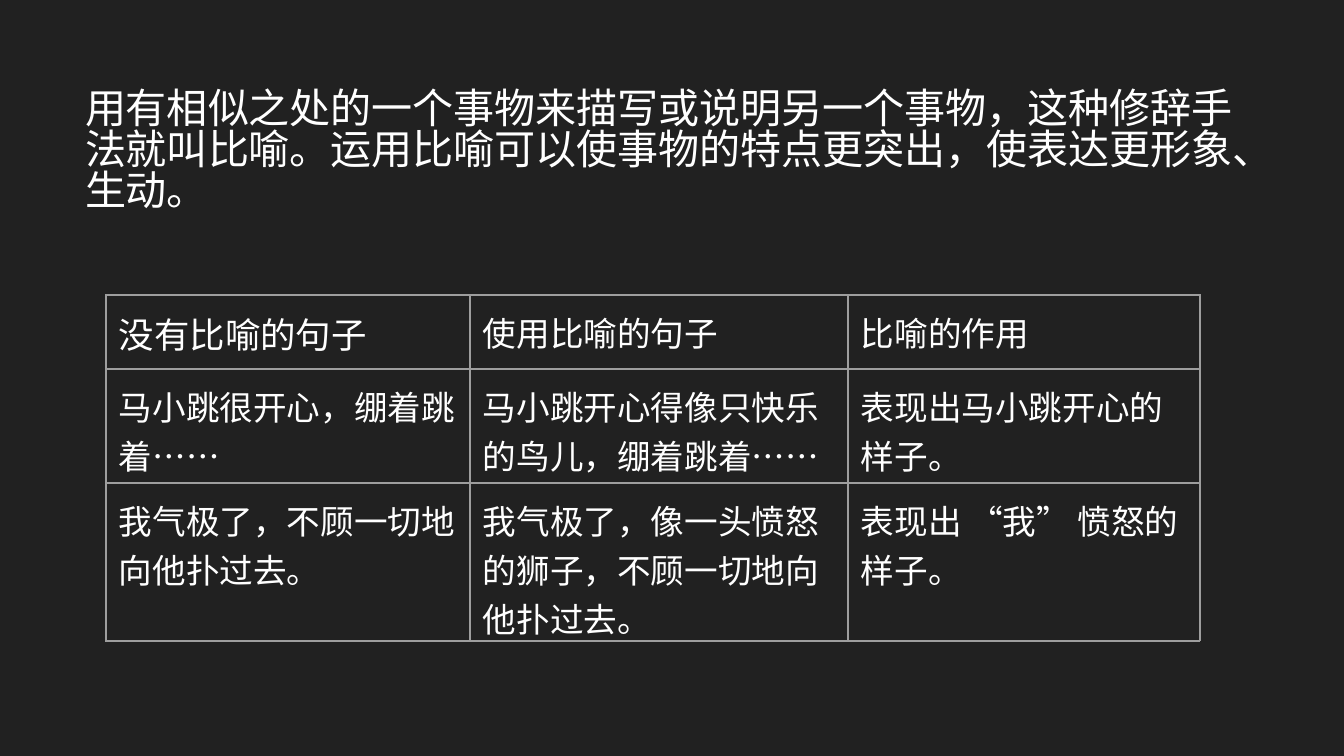
from lxml import etree
from pptx import Presentation
from pptx.dml.color import RGBColor
from pptx.enum.text import MSO_ANCHOR
from pptx.oxml.ns import qn
from pptx.util import Pt

EMU_PER_PX = 914400 / 134.4
TOP = MSO_ANCHOR.TOP
COLORS = {"background": "212121", "text": "FFFFFF", "border": "9E9E9E"}
INSETS = {f"margin_{side}": 13 for side in ("left", "right", "top", "bottom")}
BORDER_TAGS = ("a:lnL", "a:lnR", "a:lnT", "a:lnB")
BORDER_WIDTH = Pt(0.75)

DEFINITION = (
    "用有相似之处的一个事物来描写或说明另一个事物，这种修辞手法就叫比喻。"
    "运用比喻可以使事物的特点更突出，使表达更形象、生动。"
)
COMPARISON = [
    ["没有比喻的句子", "使用比喻的句子", "比喻的作用"],
    ["马小跳很开心，绷着跳着……", "马小跳开心得像只快乐的鸟儿，绷着跳着……", "表现出马小跳开心的样子。"],
    [
        "我气极了，不顾一切地向他扑过去。",
        "我气极了，像一头愤怒的狮子，不顾一切地向他扑过去。",
        "表现出 “我” 愤怒的样子。",
    ],
]
COLUMN_WIDTHS = [364, 378, 352]
ROW_HEIGHTS = [74, 114, 158]


def px(length):
    """Turn pixels into EMU."""
    return round(length * EMU_PER_PX)


def color(name):
    """Look up a named colour."""
    return RGBColor.from_string(COLORS[name])


def set_attributes(target, values):
    """Set each attribute in values on target."""
    for name, value in values.items():
        setattr(target, name, value)


def write_text(frame, wording, size):
    """Fill a text frame with one white paragraph and return it."""
    frame.word_wrap = True
    paragraph = frame.paragraphs[0]
    run = paragraph.add_run()
    run.text = wording
    set_attributes(run.font, {"name": "Arial", "size": Pt(size)})
    run.font.color.rgb = color("text")
    return paragraph


def add_definition(slide):
    """Add the definition above the table."""
    frame = slide.shapes.add_textbox(px(72), px(78), px(1200), px(176)).text_frame
    set_attributes(frame, {name: px(inset) for name, inset in INSETS.items()})
    frame.vertical_anchor = TOP
    write_text(frame, DEFINITION, 22).line_spacing = 0.83


def add_borders(cell):
    """Draw a thin line on all four sides of a cell."""
    properties = cell._tc.get_or_add_tcPr()
    for position, tag in enumerate(BORDER_TAGS):
        line = etree.Element(qn(tag), w=str(BORDER_WIDTH))
        fill = etree.SubElement(line, qn("a:solidFill"))
        etree.SubElement(fill, qn("a:srgbClr"), val=COLORS["border"])
        properties.insert(position, line)


def add_comparison(slide):
    """Add the table of sentences with and without a metaphor."""
    table = slide.shapes.add_table(
        len(ROW_HEIGHTS), len(COLUMN_WIDTHS), px(106), px(295),
        px(sum(COLUMN_WIDTHS)), px(sum(ROW_HEIGHTS)),
    ).table
    set_attributes(table, {"first_row": False, "horz_banding": False})
    for column, width in zip(table.columns, COLUMN_WIDTHS):
        column.width = px(width)
    for row_index, (row, height) in enumerate(zip(table.rows, ROW_HEIGHTS)):
        row.height = px(height)
        for column_index, cell in enumerate(row.cells):
            set_attributes(cell, {name: px(inset) for name, inset in INSETS.items()})
            cell.vertical_anchor = TOP
            cell.fill.background()
            add_borders(cell)
            size = 19 if row_index == column_index == 0 else 18
            write_text(cell.text_frame, COMPARISON[row_index][column_index], size)


def main():
    """Build and save the slide."""
    deck = Presentation()
    set_attributes(deck, {"slide_width": px(1344), "slide_height": px(756)})
    slide = deck.slides.add_slide(deck.slide_layouts[6])
    slide.background.fill.solid()
    slide.background.fill.fore_color.rgb = color("background")
    add_definition(slide)
    add_comparison(slide)
    deck.save("out.pptx")


if __name__ == "__main__":
    main()
